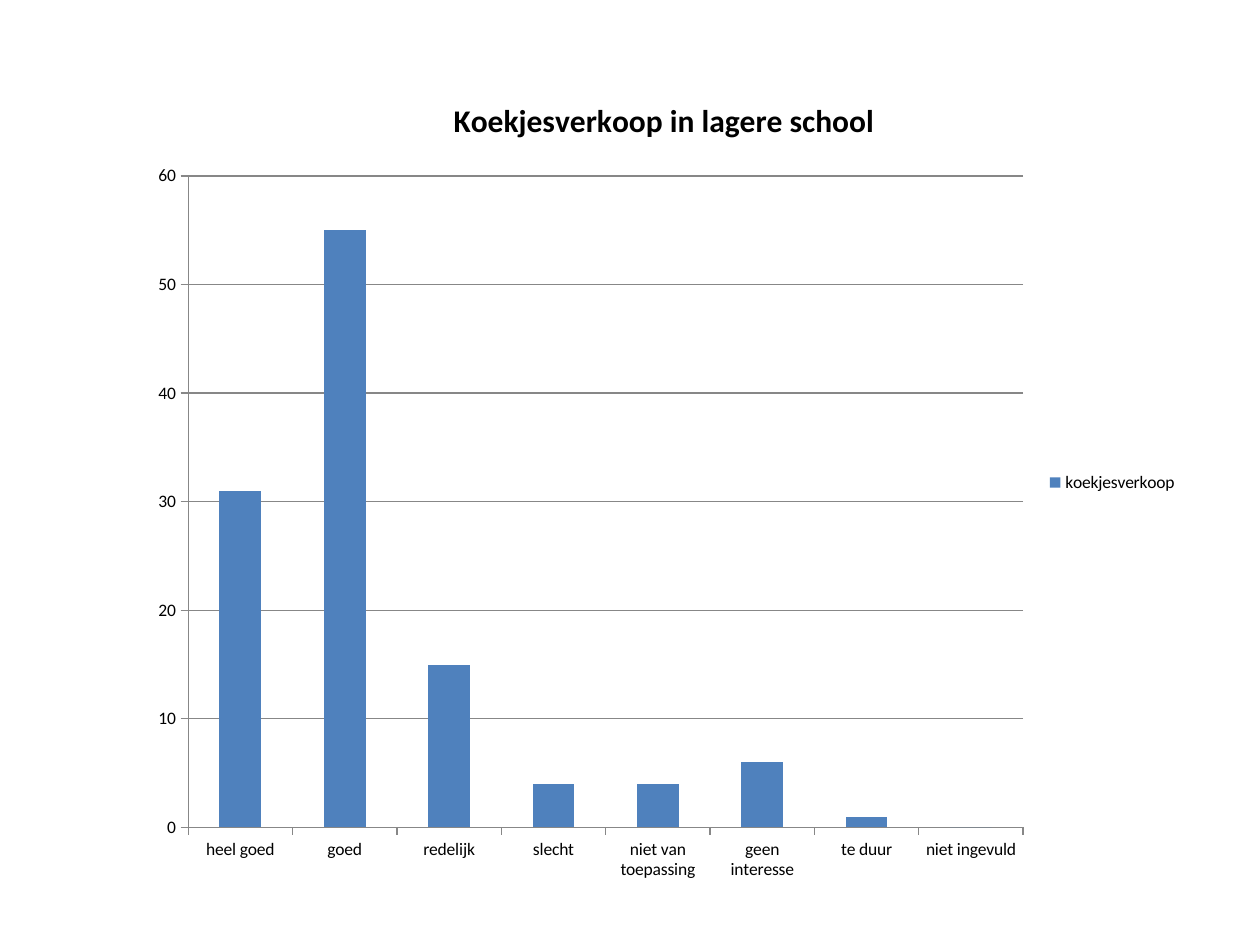
from pptx import Presentation
from pptx.chart.data import CategoryChartData
from pptx.dml.color import RGBColor
from pptx.enum.chart import XL_CHART_TYPE as ChartType, XL_LEGEND_POSITION as LegendPos
from pptx.enum.chart import XL_TICK_MARK as TickMark
from pptx.util import Inches, Pt

FONT = "Calibri"
BLACK, GRAY, BLUE = "000000", "878787", "4F81BD"
SALES = {
    "heel goed": 31,
    "goed": 55,
    "redelijk": 15,
    "slecht": 4,
    "niet van toepassing": 4,
    "geen interesse": 6,
    "te duur": 1,
    "niet ingevuld": 0,
}


def rgb(value):
    return RGBColor.from_string(value)


def format_font(font, size=10, bold=False, color=BLACK):
    font.name = FONT
    font.size = Pt(size)
    font.bold = bold
    font.color.rgb = rgb(color)


def format_line(line, color=GRAY, width=0.75):
    line.color.rgb = rgb(color)
    line.width = Pt(width)


def set_title(chart, text, **fmt):
    chart.has_title = True
    title = chart.chart_title
    title.include_in_layout = False
    r = title.text_frame.paragraphs[0].add_run()
    r.text = text
    format_font(r.font, **fmt)


def format_axis(axis, grid=False):
    axis.major_tick_mark = TickMark.OUTSIDE
    axis.minor_tick_mark = TickMark.NONE
    axis.has_major_gridlines = grid
    format_line(axis.format.line)
    if grid:
        format_line(axis.major_gridlines.format.line)


def add_column_chart(slide, name, values, left, top, width, height):
    data = CategoryChartData()
    data.categories = list(values)
    data.add_series(name, list(values.values()))
    chart = slide.shapes.add_chart(
        ChartType.COLUMN_CLUSTERED,
        Inches(left), Inches(top), Inches(width), Inches(height), data,
    ).chart
    format_font(chart.font)

    plot = chart.plots[0]
    plot.gap_width = 150
    plot.vary_by_categories = False
    fill = plot.series[0].format.fill
    fill.solid()
    fill.fore_color.rgb = rgb(BLUE)

    format_axis(chart.category_axis)
    format_axis(chart.value_axis, grid=True)
    chart.value_axis.minimum_scale = 0
    chart.value_axis.maximum_scale = 60
    chart.value_axis.major_unit = 10

    chart.has_legend = True
    chart.legend.position = LegendPos.RIGHT
    chart.legend.include_in_layout = False
    return chart


def main():
    prs = Presentation()
    prs.slide_width, prs.slide_height = Inches(10), Inches(7.5)
    blank = prs.slide_layouts[6]
    slide = prs.slides.add_slide(blank)
    chart = add_column_chart(slide, "koekjesverkoop", SALES, 1.09, 0.55, 8.36, 6.56)
    set_title(chart, "Koekjesverkoop in lagere school", size=18, bold=True)
    prs.save("out.pptx")


if __name__ == "__main__":
    main()
